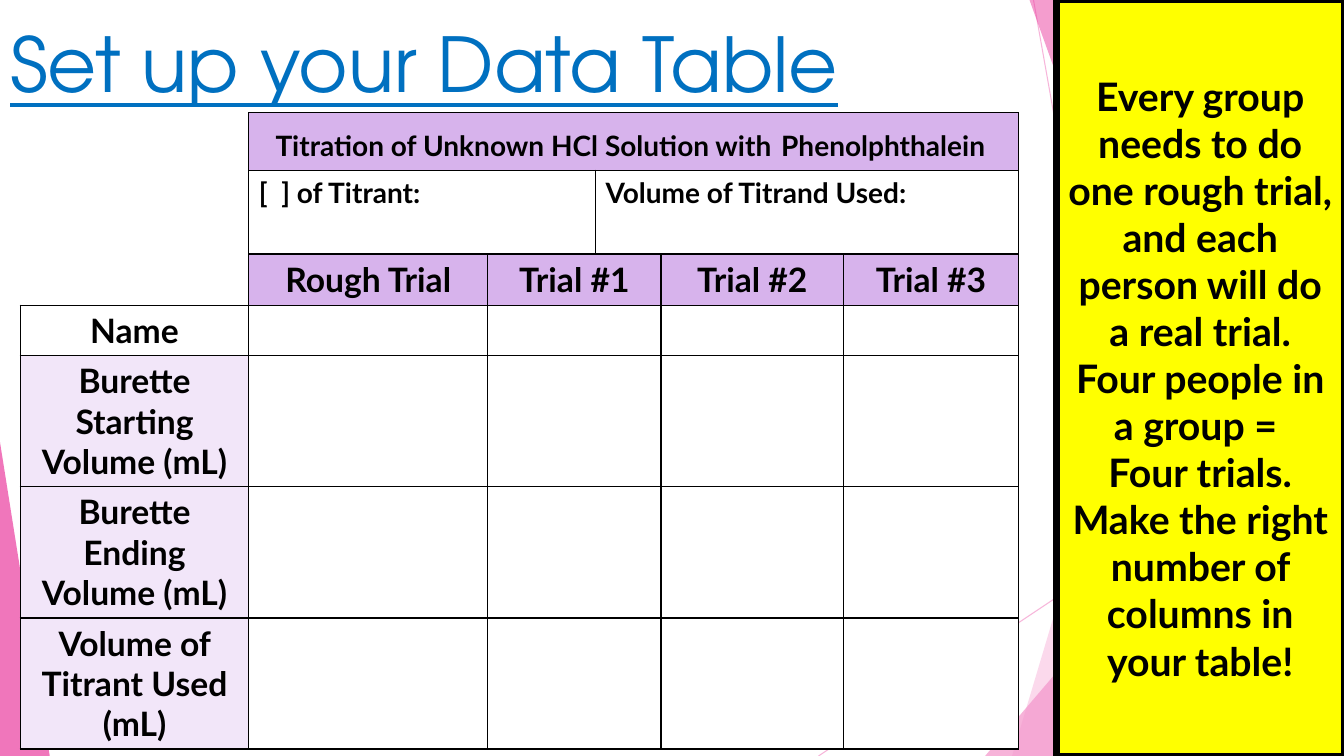
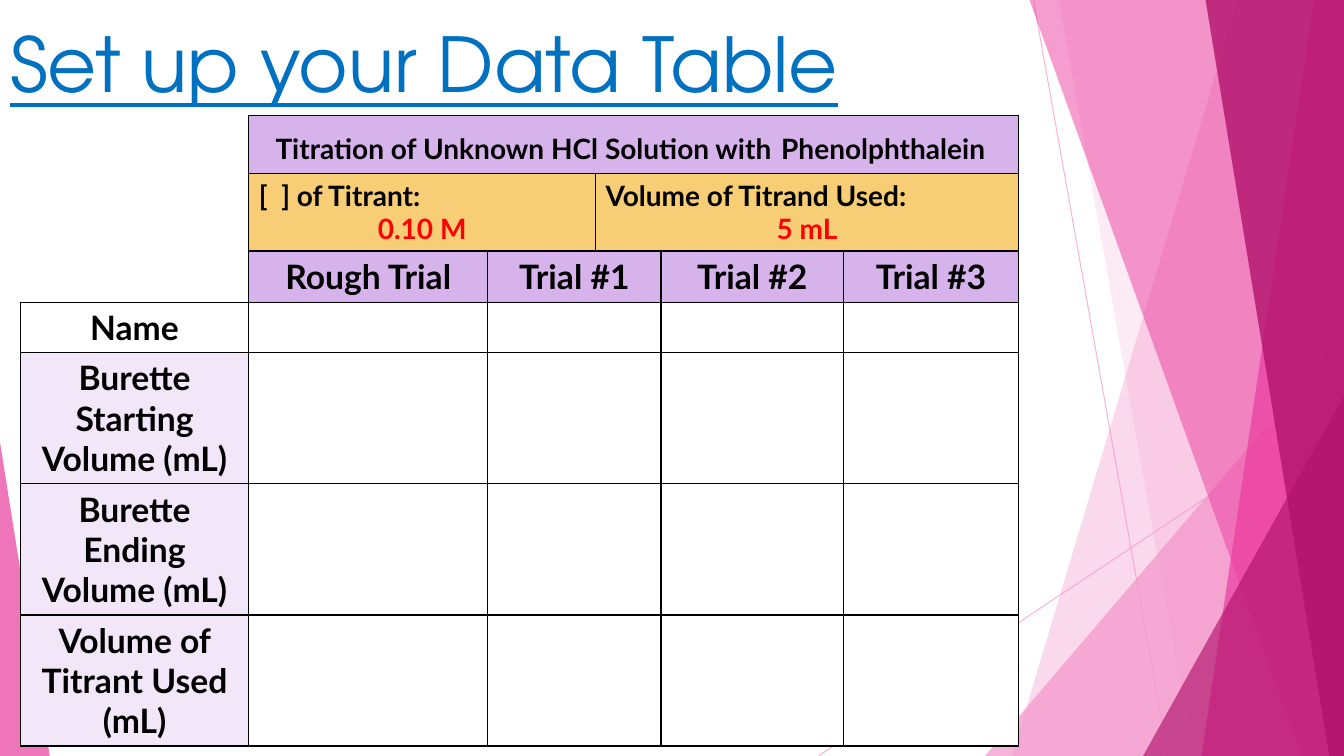
from lxml import etree
from pptx import Presentation
from pptx import util as u
from pptx.dml import color
from pptx.enum import shapes, text
from pptx.oxml import ns

# Shared look
WIDTH, HEIGHT = u.Inches(13.33), u.Inches(7.5)
BODY_FONT, TITLE_FONT = "Lato", "TeX Gyre Adventor"
BLACK, WHITE, RED, BLUE = "000000", "FFFFFF", "FF0000", "0070C0"
LILAC, PALE_LILAC, AMBER, YELLOW = "D7B3EC", "F2E6F9", "F7CD75", "FFFF00"
LIGHT_PINK, PINK, MAGENTA = "F496CB", "EB3D9F", "B2136D"
LEFT, CENTER = text.PP_ALIGN.LEFT, text.PP_ALIGN.CENTER

# Boxes as percentages of the slide: left, top, width, height
TITLE_BOX = (0, 1.6, 77.3, 30.3)
SIDEBAR_BOX = (78.6, 0, 21.4, 100)

# Data table
COLUMNS = [2.27, 2.37, 1.07, 0.65, 1.81, 1.74]
TRIAL_COLUMNS = {1: "Rough Trial", 2: "Trial #1", 4: "Trial #2", 5: "Trial #3"}
ROW_LABELS = ["Name", "Burette Starting Volume (mL)",
              "Burette Ending Volume (mL)", "Volume of Titrant Used (mL)"]


def rgb(value):
    return color.RGBColor.from_string(value)


def across(percent):
    return round(WIDTH * percent / 100)


def down(percent):
    return round(HEIGHT * percent / 100)


def to_emu(box):
    left, top, width, height = box
    return across(left), down(top), across(width), down(height)


def paint(fill, value, opacity=100):
    fill.solid()
    fill.fore_color.rgb = rgb(value)
    if opacity < 100:
        solid = fill._xPr.find(ns.qn("a:solidFill"))
        etree.SubElement(solid[0], ns.qn("a:alpha"), val=str(opacity * 1000))


def add_run(paragraph, words, size, value=BLACK, font=BODY_FONT, bold=True):
    run = paragraph.add_run()
    run.text = words
    run.font.name, run.font.size, run.font.bold = font, u.Pt(size), bold
    run.font.color.rgb = rgb(value)
    return run


# Faceted background, kept on the layout
def add_line(slide, start, end):
    line = slide.shapes.add_connector(
        shapes.MSO_CONNECTOR.STRAIGHT, across(start[0]), down(start[1]),
        across(end[0]), down(end[1]))
    line.line.width = u.Pt(0.75)
    paint(line.line.fill, LIGHT_PINK, 70)
    etree.SubElement(line._element.spPr, ns.qn("a:effectLst"))


def add_facet(slide, points, value, opacity):
    corners = [(across(x), down(y)) for x, y in points]
    builder = slide.shapes.build_freeform(*corners[0])
    builder.add_line_segments(corners[1:], close=True)
    facet = builder.convert_to_shape()
    facet.shadow.inherit = False
    facet.line.fill.background()
    paint(facet.fill, value, opacity)


def add_band(slide, top_x, bottom_x, value, opacity):
    points = [(top_x, 0), (100, 0), (100, 100), (bottom_x, 100)]
    add_facet(slide, points, value, opacity)


def add_wedge(slide, left, top, value, opacity):
    add_facet(slide, [(left, 100), (100, top), (100, 100)], value, opacity)


def draw_background(slide):
    add_line(slide, (76.9, 0), (86.9, 100))
    add_line(slide, (100, 53.7), (60.9, 100))
    add_band(slide, 92.1, 75.3, LIGHT_PINK, 36)
    add_band(slide, 78.8, 88.75, LIGHT_PINK, 20)
    add_wedge(slide, 73.3, 44.4, LIGHT_PINK, 72)
    add_band(slide, 76.6, 96.85, PINK, 50)
    add_band(slide, 97.75, 89.4, PINK, 70)
    add_band(slide, 89.7, 98.9, MAGENTA, 80)
    add_wedge(slide, 85.05, 52.4, MAGENTA, 66)
    add_facet(slide, [(0, 58.5), (3.7, 100), (0, 100)], PINK, 70)


def move_background_to_layout(slide):
    tree = slide.slide_layout.shapes._spTree
    parts = [shape for shape in slide.shapes if not shape.is_placeholder]
    for index, shape in enumerate(parts):
        shape._element.xpath(".//p:cNvPr")[0].set("id", str(100 + index))
        tree.insert(2 + index, shape._element)


# Title
def set_title(slide, box, words):
    title = slide.shapes.title
    title.left, title.top, title.width, title.height = to_emu(box)
    frame = title.text_frame
    frame.word_wrap = True
    frame.auto_size = text.MSO_AUTO_SIZE.NONE
    frame.vertical_anchor = text.MSO_ANCHOR.TOP
    frame.paragraphs[0].alignment = LEFT
    run = add_run(frame.paragraphs[0], words, 54, BLUE, TITLE_FONT, False)
    run.font.underline = True


# Table cells
def set_borders(cell, visible):
    properties = cell._tc.get_or_add_tcPr()
    for index, side in enumerate("LRTB"):
        border = etree.Element(ns.qn("a:ln" + side), w=str(u.Pt(1)))
        if side in visible:
            solid = etree.SubElement(border, ns.qn("a:solidFill"))
            etree.SubElement(solid, ns.qn("a:srgbClr"), val=BLACK)
        else:
            etree.SubElement(border, ns.qn("a:noFill"))
        properties.insert(index, border)


def fill_cell(cell, fill, *paragraphs):
    paint(cell.fill, fill)
    frame = cell.text_frame
    for index, (alignment, runs) in enumerate(paragraphs):
        paragraph = frame.add_paragraph() if index else frame.paragraphs[0]
        paragraph.alignment = alignment
        for run in runs:
            add_run(paragraph, *run)


def fill_given(cell, label, answer):
    paragraphs = [(LEFT, [(label, 20)])]
    if answer:
        paragraphs.append((CENTER, [(answer, 20, RED)]))
    fill_cell(cell, AMBER if answer else WHITE, *paragraphs)


def add_data_table(slide, box, rows, answers):
    left, top, width, height = to_emu(box)
    table = slide.shapes.add_table(
        len(rows), len(COLUMNS), left, top, width, height).table
    table.first_row = table.horz_banding = False
    for column, share in zip(table.columns, COLUMNS):
        column.width = round(width * share / sum(COLUMNS))
    for row, share in zip(table.rows, rows):
        row.height = round(height * share / sum(rows))

    for row in range(len(rows)):
        for column in range(len(COLUMNS)):
            cell = table.cell(row, column)
            corner = row < 3 and column == 0
            set_borders(cell, "RB" if corner else "LRTB")
            paint(cell.fill, WHITE)

    # Merged areas: first row, first column, last row, last column
    merges = [(0, 0, 2, 0), (0, 1, 0, 5), (1, 1, 1, 2), (1, 3, 1, 5)]
    merges += [(row, 2, row, 3) for row in range(2, len(rows))]
    for first_row, first_column, last_row, last_column in merges:
        table.cell(first_row, first_column).merge(
            table.cell(last_row, last_column))

    # Headings and row labels
    fill_cell(table.cell(0, 1), LILAC, (CENTER, [
        ("Titration of Unknown HCl Solution with", 20), (" ", 28),
        ("Phenolphthalein ", 20)]))
    fill_given(table.cell(1, 1), "[  ] of Titrant:", answers[0])
    fill_given(table.cell(1, 3), "Volume of Titrand Used:", answers[1])
    for column, label in TRIAL_COLUMNS.items():
        fill_cell(table.cell(2, column), LILAC, (CENTER, [(label, 24)]))
    for row, label in enumerate(ROW_LABELS, start=3):
        fill = WHITE if label == "Name" else PALE_LILAC
        fill_cell(table.cell(row, 0), fill, (CENTER, [(label, 24)]))


# Yellow instruction panel
def add_sidebar(slide, box, lines):
    panel = slide.shapes.add_shape(
        shapes.MSO_SHAPE.RECTANGLE, *to_emu(box))
    panel.shadow.inherit = False
    paint(panel.fill, YELLOW)
    paint(panel.line.fill, BLACK)
    panel.line.width = u.Pt(4.5)
    frame = panel.text_frame
    frame.word_wrap = True
    frame.vertical_anchor = text.MSO_ANCHOR.MIDDLE
    paragraph = frame.paragraphs[0]
    paragraph.alignment = CENTER
    for index, line in enumerate(lines):
        if index:
            paragraph.add_line_break()
        add_run(paragraph, line, 28)


def add_table_slide(presentation, table_box, given_height, answers):
    slide = presentation.slides.add_slide(presentation.slide_layouts[5])
    set_title(slide, TITLE_BOX, "Set up your Data Table")
    rows = [0.57, given_height, 0.51, 0.5, 1.3, 1.3, 1.3]
    add_data_table(slide, table_box, rows, answers)
    return slide


def main():
    presentation = Presentation()
    presentation.slide_width, presentation.slide_height = WIDTH, HEIGHT

    blank_table = add_table_slide(
        presentation, (1.5, 14.93, 74.3, 84.13), 0.83, (None, None))
    add_sidebar(blank_table, SIDEBAR_BOX, [
        "Every group needs to do one rough trial, and each person will do "
        "a real trial. Four people in a group = ",
        "Four trials. Make the right number of columns in your table!"])

    answered_table = add_table_slide(
        presentation, (1.5, 15.33, 74.3, 83.33), 0.77, ("0.10 M", "5 mL"))

    # The table is a graphic frame, so the facets are drawn on a spare canvas
    share_background(answered_table)
    presentation.save("out.pptx")


def share_background(slide):
    existing = {shape.shape_id for shape in slide.shapes}
    draw_background(slide)
    tree = slide.slide_layout.shapes._spTree
    facets = [shape for shape in slide.shapes
              if shape.shape_id not in existing]
    for index, shape in enumerate(facets):
        shape._element.xpath(".//p:cNvPr")[0].set("id", str(100 + index))
        tree.insert(2 + index, shape._element)


if __name__ == "__main__":
    main()
